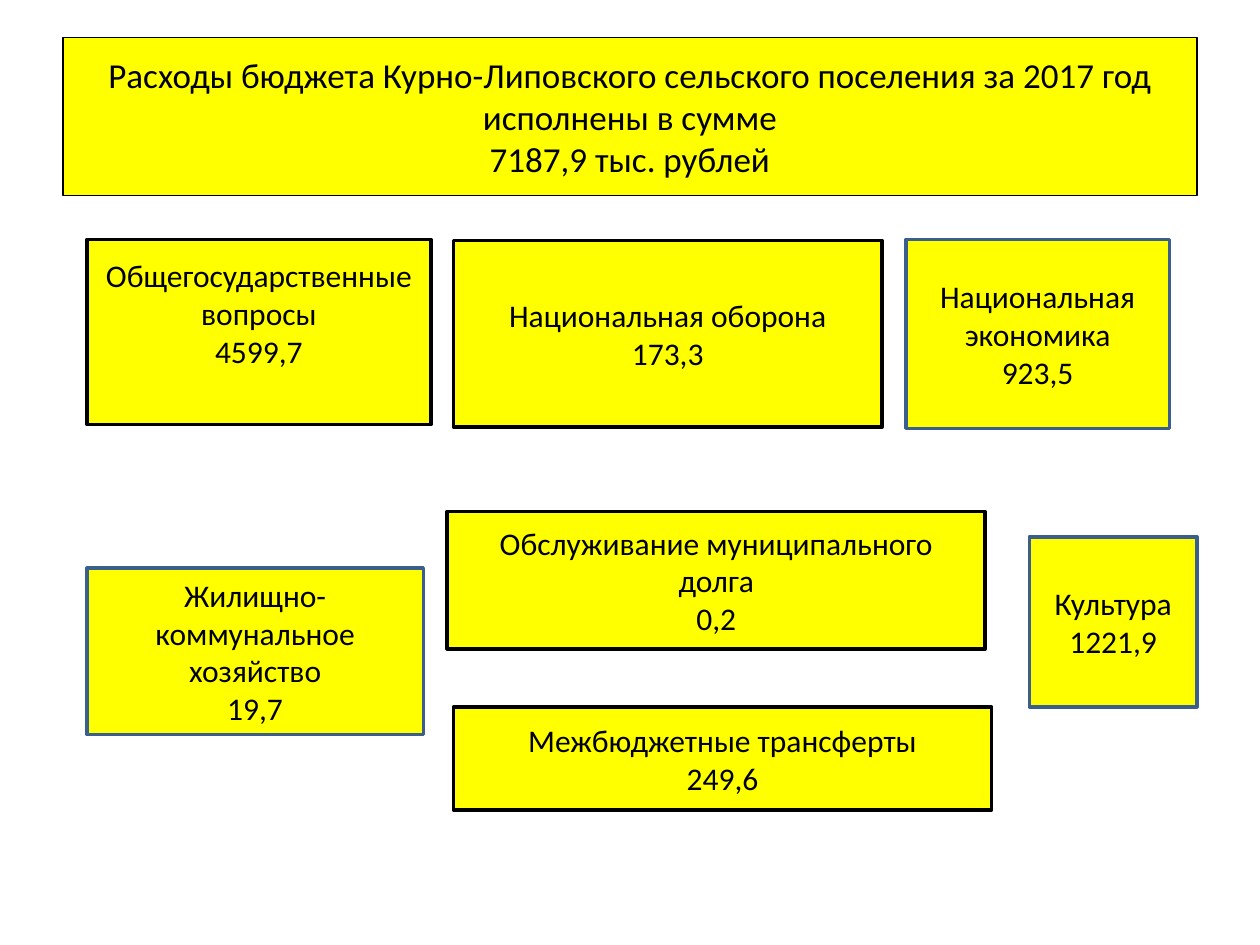
import pptx
import pptx.dml.color
import pptx.enum.shapes
import pptx.enum.text
import pptx.util

Inches, Pt = pptx.util.Inches, pptx.util.Pt
FONT = "Calibri"
COLORS = {"fill": "FFFF00", "black": "000000", "blue": "3A5F8C"}

TITLE = ("Расходы бюджета Курно-Липовского сельского поселения за 2017 год "
         "исполнены в сумме\v7187,9 тыс. рублей")
TITLE_BOX = (0.5, 0.3, 9, 1.25)

# name, amount, (left, top, width, height), outline, bottom inset
EXPENSES = [
    ("Общегосударственные вопросы", "4599,7", (0.69, 1.9, 2.73, 1.47), "black", 0.35),
    ("Национальная оборона", "173,3", (3.6, 1.91, 3.4, 1.48), "black", 0.05),
    ("Национальная экономика", "923,5", (7.19, 1.9, 2.09, 1.5), "blue", 0.05),
    ("Жилищно-коммунальное хозяйство", "19,7", (0.69, 4.51, 2.67, 1.32), "blue", 0.05),
    ("Культура", "1221,9", (8.17, 4.26, 1.33, 1.35), "blue", 0.05),
    ("Обслуживание муниципального долга", "0,2", (3.55, 4.06, 4.27, 1.09), "black", 0.05),
    ("Межбюджетные трансферты", "249,6", (3.6, 5.61, 4.27, 0.82), "black", 0.05),
]


def rgb(name):
    return pptx.dml.color.RGBColor.from_string(COLORS[name])


def add_box(s, paragraphs, box, outline, line_width, size, bottom=0.05):
    sp = s.shapes.add_shape(pptx.enum.shapes.MSO_SHAPE.RECTANGLE,
                            *(Inches(v) for v in box))
    sp.shadow.inherit = False
    sp.fill.solid()
    sp.fill.fore_color.rgb = rgb("fill")
    sp.line.color.rgb = rgb(outline)
    sp.line.width = Pt(line_width)
    tf = sp.text_frame
    tf.word_wrap = True
    tf.vertical_anchor = pptx.enum.text.MSO_ANCHOR.MIDDLE
    tf.margin_bottom = Inches(bottom)
    for i, text in enumerate(paragraphs):
        p = tf.paragraphs[0] if i == 0 else tf.add_paragraph()
        p.text = text
        p.alignment = pptx.enum.text.PP_ALIGN.CENTER
        for r in p.runs:
            for key, value in {"name": FONT, "size": Pt(size)}.items():
                setattr(r.font, key, value)
            r.font.color.rgb = rgb("black")


prs = pptx.Presentation()
prs.slide_width, prs.slide_height = Inches(10), Inches(7.5)
s = prs.slides.add_slide(prs.slide_layouts[6])

add_box(s, [TITLE], TITLE_BOX, "black", 0.75, 20)
for name, amount, box, outline, bottom in EXPENSES:
    add_box(s, [name, amount], box, outline, 2, 18, bottom)

prs.save("out.pptx")
